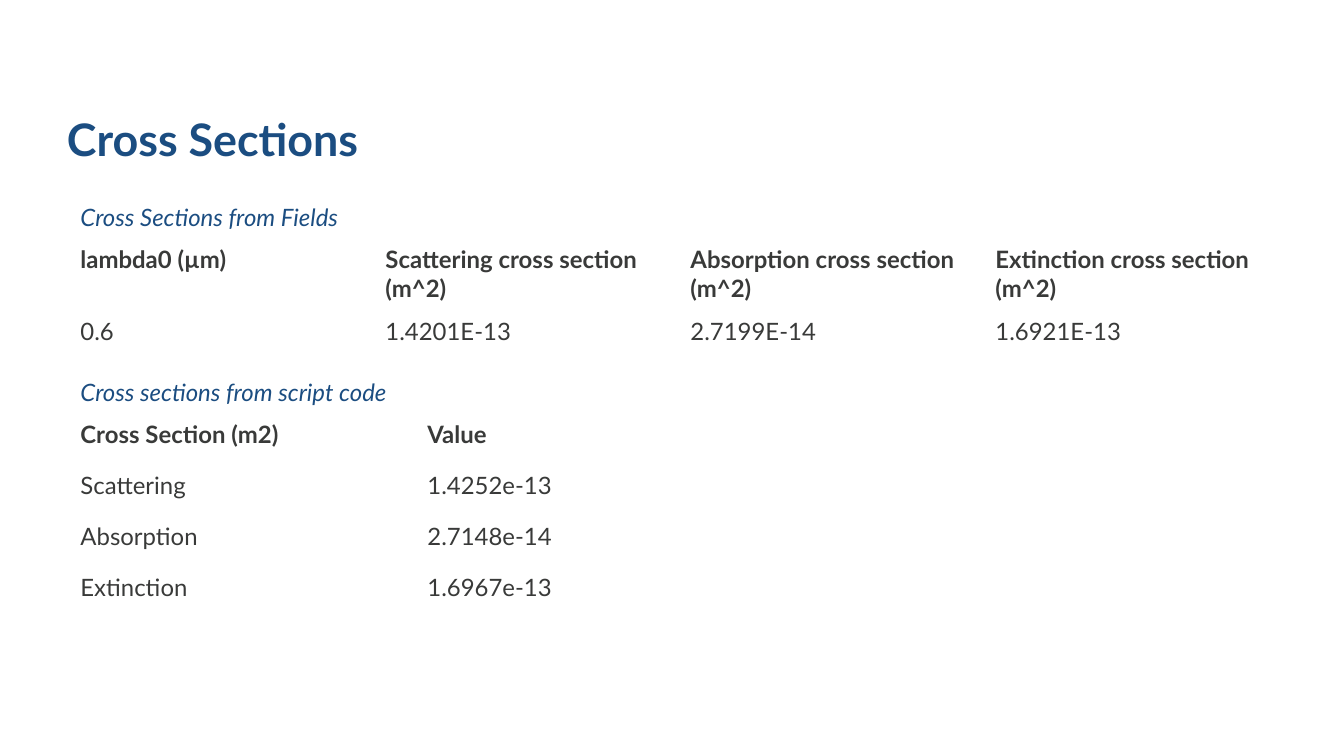
import pptx
import pptx.util
import pptx.dml.color
import pptx.enum.text

HUES = {"navy": "1B4D81", "ink": "393A39"}
FACE = "Lato"
LEFT = 67


def px(count):
    return pptx.util.Emu(round(count * 914400 / 134.4))


def style(para, size, hue, bold=False, italic=False):
    font = para.font
    font.name = FACE
    font.size = pptx.util.Pt(size)
    font.bold = bold
    font.italic = italic
    font.color.rgb = pptx.dml.color.RGBColor.from_string(HUES[hue])


def add_title(slide, text):
    title = slide.shapes.title
    title.left, title.top, title.width, title.height = map(px, (LEFT, 87, 1220, 109))
    frame = title.text_frame
    frame.text = text
    frame.margin_left = 0
    frame.vertical_anchor = pptx.enum.text.MSO_ANCHOR.MIDDLE
    para = frame.paragraphs[0]
    para.alignment = pptx.enum.text.PP_ALIGN.LEFT
    para.line_spacing = 0.9
    style(para, 24, "navy", bold=True)


def fill_cell(cell, text, row):
    cell.fill.background()
    if not text:
        cell.margin_top = cell.margin_bottom = 0
        return
    cell.text = text
    hue = "navy" if row == 0 else "ink"
    style(cell.text_frame.paragraphs[0], 12.8, hue, bold=row == 1, italic=row == 0)


def add_grid(slide, top, widths, heights, rows):
    frame = slide.shapes.add_table(
        len(rows), len(widths), px(LEFT), px(top), px(sum(widths)), px(sum(heights))
    )
    table = frame.table
    table.first_row = False
    table.horz_banding = False
    for column, width in zip(table.columns, widths):
        column.width = px(width)
    for line, height in zip(table.rows, heights):
        line.height = px(height)
    for row, texts in enumerate(rows):
        for col in range(len(widths)):
            text = texts[col] if col < len(texts) else ""
            fill_cell(table.cell(row, col), text, row)
    table.cell(0, 0).merge(table.cell(0, len(widths) - 1))


def main():
    deck = pptx.Presentation()
    deck.slide_width, deck.slide_height = px(1344), px(756)
    slide = deck.slides.add_slide(deck.slide_layouts[5])
    add_title(slide, "Cross Sections")
    kinds = ("Scattering", "Absorption", "Extinction")
    add_grid(slide, 196, [305] * 4, [42, 71, 42], [
        ["Cross Sections from Fields"],
        ["lambda0 (µm)"] + [f"{kind} cross section (m^2)" for kind in kinds],
        ["0.6", "1.4201E-13", "2.7199E-14", "1.6921E-13"],
    ])
    values = ("1.4252e-13", "2.7148e-14", "1.6967e-13")
    add_grid(slide, 371, [347, 277, 597], [42] + [51] * 4, [
        ["Cross sections from script code"],
        ["Cross Section (m2)", "Value"],
        *zip(kinds, values),
    ])
    deck.save("out.pptx")


if __name__ == "__main__":
    main()
